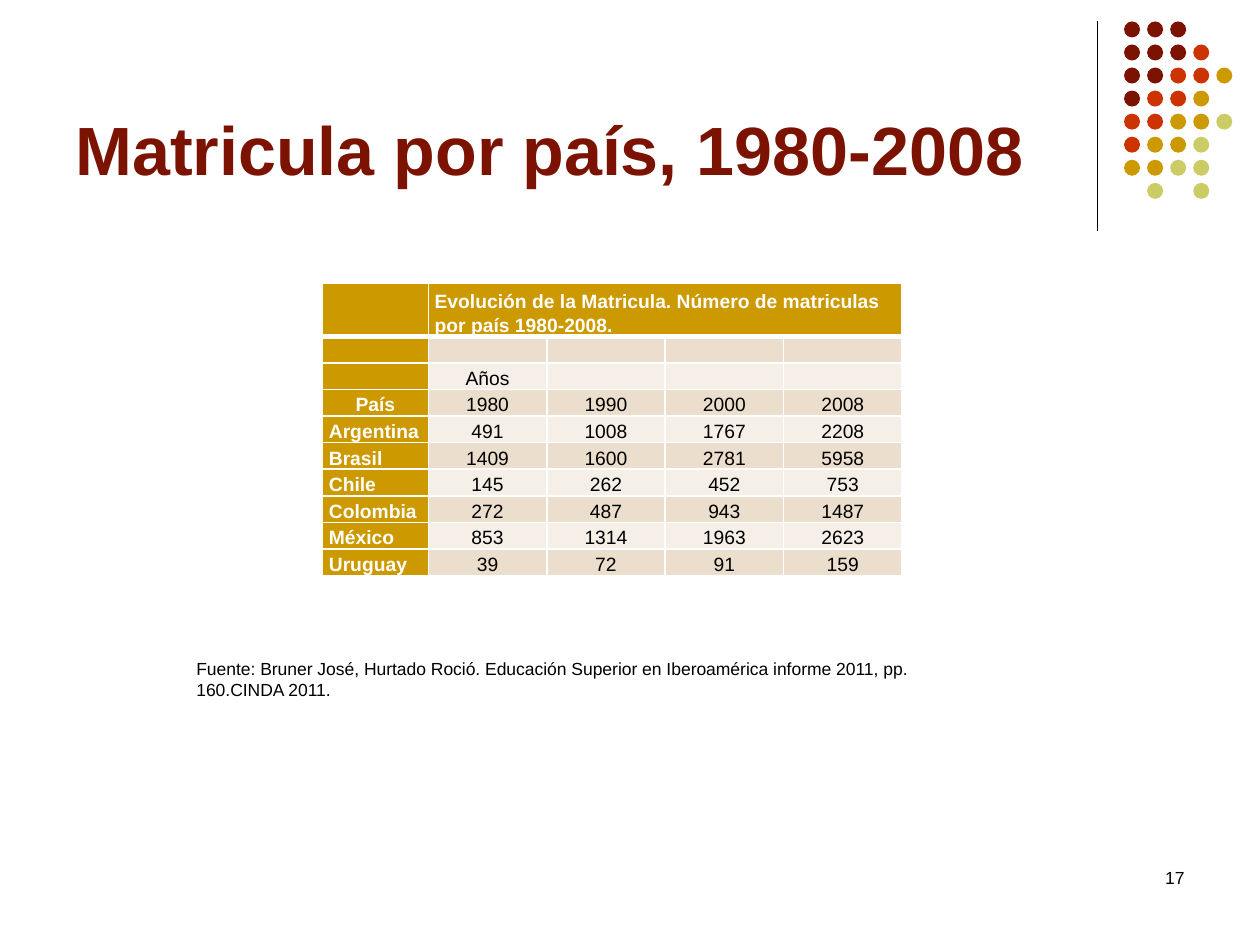
from lxml.etree import SubElement
from pptx import Presentation
from pptx.dml.color import RGBColor
from pptx.enum.shapes import MSO_CONNECTOR, MSO_SHAPE
from pptx.enum.text import MSO_ANCHOR, PP_ALIGN
from pptx.oxml.ns import qn
from pptx.util import Inches, Pt

MAROON = RGBColor(0x7C, 0x13, 0x02)
RED = RGBColor(0xCC, 0x33, 0x00)
GOLD = RGBColor(0xCC, 0x99, 0x00)
OLIVE = RGBColor(0xCC, 0xCC, 0x66)
SAND = RGBColor(0xEC, 0xDE, 0xCC)
CREAM = RGBColor(0xF6, 0xEF, 0xE7)
WHITE = RGBColor(0xFF, 0xFF, 0xFF)
BLACK = RGBColor(0x00, 0x00, 0x00)

WIDTH, HEIGHT = Inches(10), Inches(7.5)
COL, ROW = WIDTH / 100, HEIGHT / 75

DOT_COLORS = {"M": MAROON, "R": RED, "G": GOLD, "O": OLIVE}
DOTS = ["MMM", "MMMR", "MMRRG", "MRRG", "RRGGO", "RGGO", "GGOO", " O O"]
DOT_PITCH, DOT_SIZE = 1.83, 1.27

ENROLLMENT = [
    ["", "Evolución de la Matricula. Número de matriculas por país 1980-2008.", "", "", ""],
    ["", "", "", "", ""],
    ["", "Años", "", "", ""],
    ["País", "1980", "1990", "2000", "2008"],
    ["Argentina", "491", "1008", "1767", "2208"],
    ["Brasil", "1409", "1600", "2781", "5958"],
    ["Chile", "145", "262", "452", "753"],
    ["Colombia", "272", "487", "943", "1487"],
    ["México", "853", "1314", "1963", "2623"],
    ["Uruguay", "39", "72", "91", "159"],
]


def place(x, y, w, h):
    """Turn grid columns and rows into slide lengths."""
    return int(x * COL), int(y * ROW), int(w * COL), int(h * ROW)


def style(p, size, color, bold=False, align=PP_ALIGN.LEFT):
    """Set the font and alignment of a paragraph."""
    p.alignment = align
    p.font.name, p.font.size, p.font.bold = "Arial", Pt(size), bold
    p.font.color.rgb = color


def add_text(s, box, text, size, color, bold=False, align=PP_ALIGN.LEFT, anchor=MSO_ANCHOR.TOP):
    """Place one wrapped paragraph in the box."""
    tf = s.shapes.add_textbox(*place(*box)).text_frame
    tf.word_wrap, tf.vertical_anchor = True, anchor
    p = tf.paragraphs[0]
    p.text = text
    style(p, size, color, bold, align)


def add_ornament(s, box):
    """Draw the rule on the left of the box and the dots beside it."""
    x, y, w, h = place(*box)
    rule = s.shapes.add_connector(MSO_CONNECTOR.STRAIGHT, x, y, x, y + h)
    rule.line.color.rgb, rule.line.width = BLACK, Pt(0.75)
    SubElement(rule._element.spPr, qn("a:effectLst"))
    dots = s.shapes.add_group_shape()
    left = box[0] + box[2] - 4 * DOT_PITCH - DOT_SIZE
    for i, line in enumerate(DOTS):
        for j, key in enumerate(line):
            if key in DOT_COLORS:
                sp = dots.shapes.add_shape(MSO_SHAPE.OVAL, *place(
                    left + j * DOT_PITCH, box[1] + i * DOT_PITCH, DOT_SIZE, DOT_SIZE))
                sp.shadow.inherit = False
                sp.fill.solid()
                sp.fill.fore_color.rgb = DOT_COLORS[key]
                sp.line.fill.background()


def add_borders(cell, top, bottom):
    """Give a cell white borders, with the top and bottom widths in points."""
    tcPr = cell._tc.get_or_add_tcPr()
    for side, width in (("L", 1), ("R", 1), ("T", top), ("B", bottom)):
        ln = SubElement(tcPr, qn(f"a:ln{side}"), w=str(Pt(width)))
        SubElement(SubElement(ln, qn("a:solidFill")), qn("a:srgbClr"), val=str(WHITE))


def fill_cell(cell, text, i, j):
    """Write and colour the cell in row i and column j."""
    heading = i == 0 or j == 0
    add_borders(cell, 3 if i == 1 else 1, 3 if i == 0 else 1)
    cell.fill.solid()
    cell.fill.fore_color.rgb = GOLD if heading else SAND if i % 2 else CREAM
    cell.margin_left = cell.margin_right = Inches(0.05)
    cell.margin_top = cell.margin_bottom = 0
    cell.vertical_anchor = MSO_ANCHOR.BOTTOM
    p = cell.text_frame.paragraphs[0]
    if text:
        p.text = text
    p.line_spacing = 1.15
    align = PP_ALIGN.LEFT if heading and text != "País" else PP_ALIGN.CENTER
    style(p, 11, WHITE if heading else BLACK, heading, align)


def add_enrollment(s, box):
    """Place the enrollment table in the box."""
    x, y, w, h = place(*box)
    table = s.shapes.add_table(len(ENROLLMENT), len(ENROLLMENT[0]), x, y, w, h).table
    for j, col in enumerate(table.columns):
        col.width = int((9.4 if j else box[2] - 4 * 9.4) * COL)
    for i, row in enumerate(table.rows):
        row.height = int((2.08 if i else box[3] - 9 * 2.08) * ROW)
    table.cell(0, 1).merge(table.cell(0, 4))
    for i, texts in enumerate(ENROLLMENT):
        for j, text in enumerate(texts):
            fill_cell(table.cell(i, j), text, i, j)


def main():
    """Build and save the slide."""
    prs = Presentation()
    prs.slide_width, prs.slide_height = WIDTH, HEIGHT
    s = prs.slides.add_slide(prs.slide_layouts[6])
    add_ornament(s, (87.1, 1.7, 10.7, 16.6))
    add_text(s, (5, 1.3, 82.5, 14.2), "Matricula por país, 1980-2008", 39, MAROON,
             bold=True, anchor=MSO_ANCHOR.BOTTOM)
    add_enrollment(s, (25.6, 22.5, 46, 22.6))
    add_text(s, (14.6, 51.7, 59.8, 6.1),
             "Fuente: Bruner José, Hurtado Roció. Educación Superior en Iberoamérica "
             "informe 2011, pp. 160.CINDA 2011.", 10, BLACK)
    add_text(s, (71.7, 68.3, 23.3, 5), "17", 10, BLACK, align=PP_ALIGN.RIGHT)
    prs.save("out.pptx")


if __name__ == "__main__":
    main()
